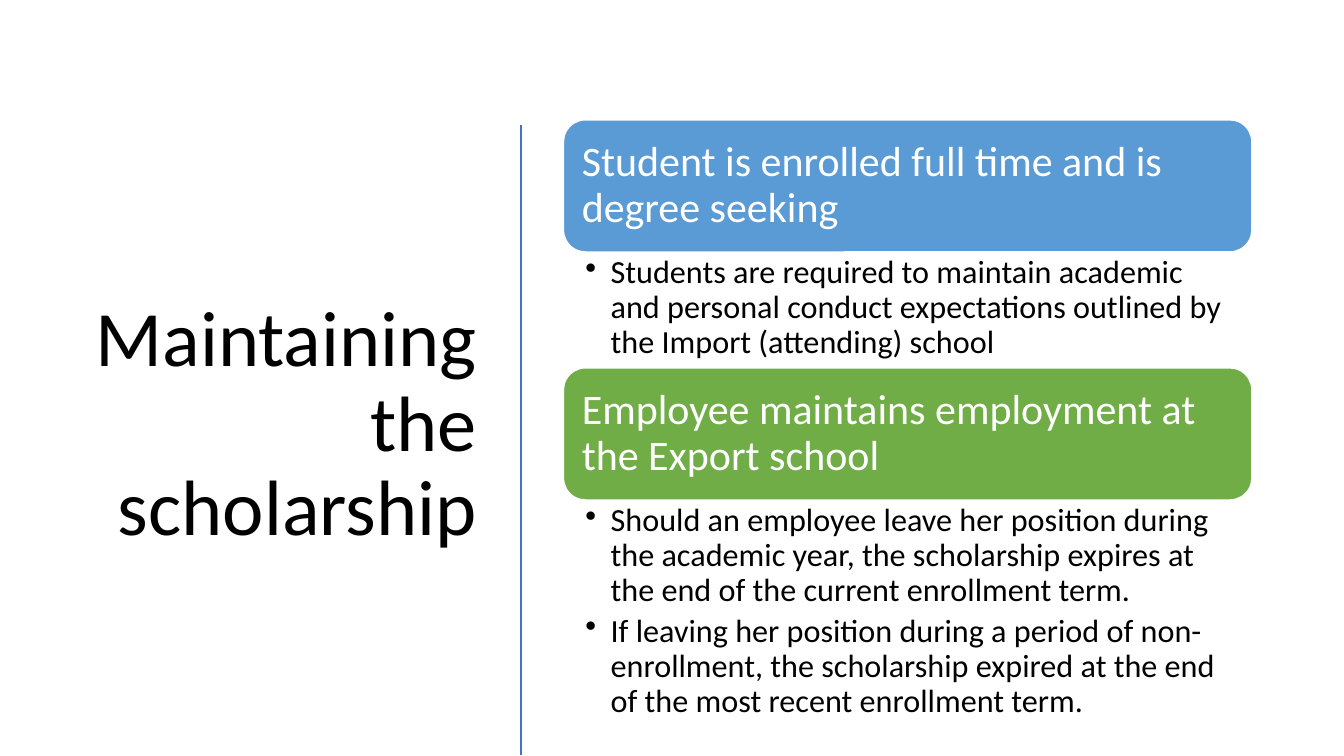
"""Build the slide on maintaining the scholarship."""
from lxml.etree import SubElement
from pptx import Presentation
from pptx.dml.color import RGBColor
from pptx.enum.shapes import MSO_CONNECTOR, MSO_SHAPE
from pptx.enum.text import MSO_ANCHOR, MSO_AUTO_SIZE, PP_ALIGN
from pptx.oxml.ns import qn
from pptx.util import Cm, Pt

theme = {
    "font": "Calibri",
    "black": RGBColor(0x00, 0x00, 0x00),
    "white": RGBColor(0xFF, 0xFF, 0xFF),
    "rule": RGBColor(0x44, 0x72, 0xC4),
    "blue": RGBColor(0x5B, 0x9B, 0xD5),
    "green": RGBColor(0x70, 0xAD, 0x47),
    "title": Pt(56),
    "head": Pt(30),
    "body": Pt(23),
}


def put(item, values):
    for name, value in values.items():
        setattr(item, name, value)


def write(shape, lines, size, color, anchor, pads, align=PP_ALIGN.LEFT, after=0):
    frame = shape.text_frame
    frame.text = "\n".join(lines)
    sides = ("margin_left", "margin_top", "margin_right", "margin_bottom")
    put(frame, {"word_wrap": True, "auto_size": MSO_AUTO_SIZE.NONE,
                "vertical_anchor": anchor})
    put(frame, dict(zip(sides, map(Cm, pads))))
    for para in frame.paragraphs:
        put(para, {"alignment": align, "line_spacing": 0.9,
                   "space_before": Pt(0), "space_after": Pt(after)})
        put(para.font, {"name": theme["font"], "size": theme[size]})
        para.font.color.rgb = theme[color]


deck = Presentation()
put(deck, {"slide_width": Cm(33.87), "slide_height": Cm(19.05)})
slide = deck.slides.add_slide(deck.slide_layouts[5])
shapes = slide.shapes

title = shapes.title
put(title, {"left": Cm(1.32), "top": Cm(2.97), "width": Cm(10.95), "height": Cm(15.52)})
write(title, ["Maintaining the scholarship"], "title", "black",
      MSO_ANCHOR.MIDDLE, (0.25, 0.13, 0.25, 0.13), PP_ALIGN.RIGHT)

rule = shapes.add_connector(MSO_CONNECTOR.STRAIGHT, Cm(13.13), Cm(3.15), Cm(13.13), Cm(19.02))
rule.line.color.rgb = theme["rule"]
rule.line.width = Pt(2)
SubElement(rule._element.spPr, qn("a:effectLst"))

rules = [
    ("blue", "Student is enrolled full time and is degree seeking", 2.92, [
        "Students are required to maintain academic and personal conduct "
        "expectations outlined by the Import (attending) school"]),
    ("green", "Employee maintains employment at the Export school", 5.87, [
        "Should an employee leave her position during the academic year, "
        "the scholarship expires at the end of the current enrollment term.",
        "If leaving her position during a period of non-enrollment, the "
        "scholarship expired at the end of the most recent enrollment term."]),
]
left, top, width, tall = 14.2, 3.02, 17.35, 3.33
for color, head, deep, points in rules:
    card = shapes.add_shape(MSO_SHAPE.ROUNDED_RECTANGLE, Cm(left), Cm(top), Cm(width), Cm(tall))
    card.shadow.inherit = False
    card.fill.solid()
    card.fill.fore_color.rgb = theme[color]
    card.line.color.rgb = theme["white"]
    card.line.width = Pt(1)
    write(card, [head], "head", "white", MSO_ANCHOR.MIDDLE, (0.3, 0.3, 0.3, 0.3))

    top += tall
    body = shapes.add_textbox(Cm(left), Cm(top), Cm(width), Cm(deep))
    write(body, points, "body", "black", MSO_ANCHOR.TOP, (0.55, 0.1, 0.58, 0.1), after=4.6)
    for para in body.text_frame.paragraphs:
        para.level = 1
        props = para._p.get_or_add_pPr()
        props.set("marL", str(Cm(0.64)))
        props.set("indent", str(-Cm(0.64)))
        mark = SubElement(props, qn("a:buChar"))
        mark.set("char", "•")
        props.remove(mark)
        props.insert_element_before(mark, "a:tabLst", "a:defRPr", "a:extLst")
    top += deep

deck.save("out.pptx")
